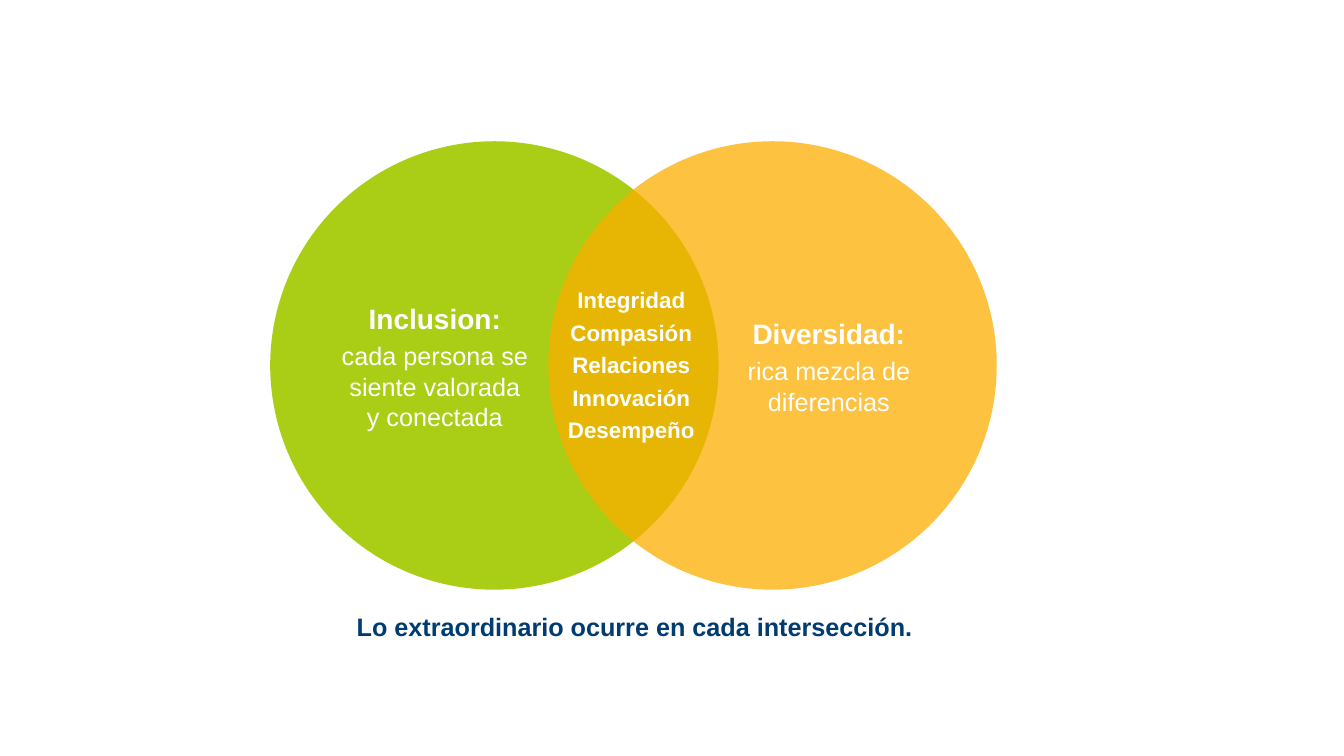
from lxml import etree
from pptx import Presentation
from pptx.dml.color import RGBColor
from pptx.enum.shapes import MSO_SHAPE
from pptx.enum.text import MSO_AUTO_SIZE, PP_ALIGN
from pptx.oxml.ns import qn
from pptx.util import Cm, Pt

COLORS = {"green": "AACE15", "orange": "FCAE00", "white": "FFFFFF", "navy": "003C71"}

prs = Presentation()
prs.slide_width, prs.slide_height = Cm(33.87), Cm(19.05)
s = prs.slides.add_slide(prs.slide_layouts[6])

venn = s.shapes.add_group_shape()
for left, color, opacity in [(6.81, "green", 100), (13.82, "orange", 75)]:
    sp = venn.shapes.add_shape(MSO_SHAPE.OVAL, Cm(left), Cm(3.56), Cm(11.3), Cm(11.3))
    sp.shadow.inherit = False
    sp.fill.solid()
    sp.fill.fore_color.rgb = RGBColor.from_string(COLORS[color])
    sp.line.fill.background()
    if opacity < 100:
        clr = sp.fill._xPr.find(qn("a:solidFill"))[0]
        etree.SubElement(clr, qn("a:alpha"), val=str(opacity * 1000))

values = ["Integridad", "Compasión", "Relaciones", "Innovación", "Desempeño"]
texts = [
    ((18.26, 7.85, 5.26, 2.79), "white", PP_ALIGN.CENTER,
     [("Diversidad:", 20, True), ("rica mezcla de diferencias", 18, False)]),
    ((8.33, 7.47, 5.26, 3.56), "white", PP_ALIGN.CENTER,
     [("Inclusion:", 20, True), ("cada persona se siente valorada y conectada", 18, False)]),
    ((13.28, 7.09, 5.26, 4.24), "white", PP_ALIGN.CENTER,
     [(value, 16, True) for value in values]),
    ((8.74, 15.27, 15.75, 1.02), "navy", PP_ALIGN.LEFT,
     [("Lo extraordinario ocurre en cada intersección.", 18, True)]),
]
for box, color, align, lines in texts:
    tf = s.shapes.add_textbox(*map(Cm, box)).text_frame
    tf.word_wrap = True
    tf.auto_size = MSO_AUTO_SIZE.SHAPE_TO_FIT_TEXT
    for i, (text, size, bold) in enumerate(lines):
        p = tf.add_paragraph() if i else tf.paragraphs[0]
        p.alignment = align
        p.space_after = Pt(4)
        r = p.add_run()
        r.text = text
        for name, value in {"name": "Arial", "size": Pt(size), "bold": bold}.items():
            setattr(r.font, name, value)
        r.font.color.rgb = RGBColor.from_string(COLORS[color])

prs.save("out.pptx")
